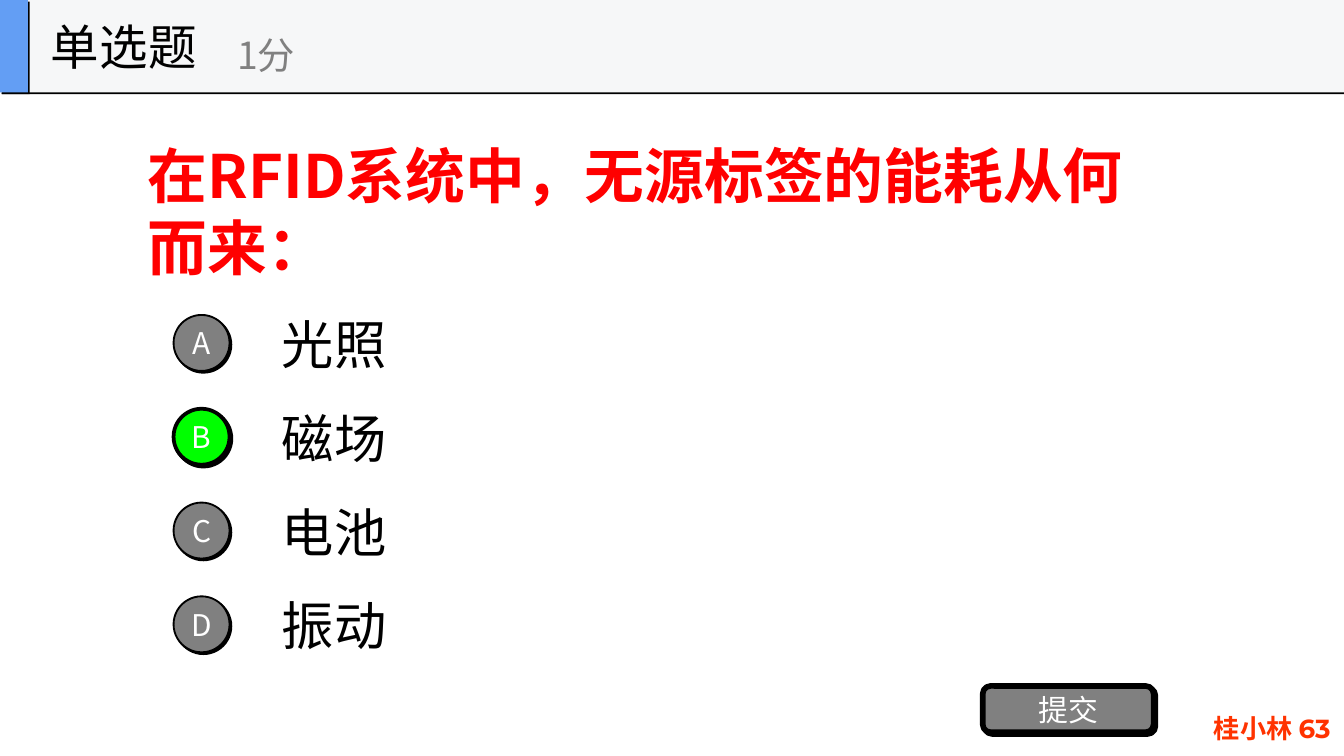
from dataclasses import dataclass

from lxml.etree import SubElement
from pptx import Presentation
from pptx.dml.color import RGBColor
from pptx.enum.shapes import MSO_SHAPE as Shape
from pptx.enum.text import MSO_ANCHOR as Anchor, PP_ALIGN as Align
from pptx.oxml.ns import qn
from pptx.util import Pt

QUESTION = "在RFID系统中，无源标签的能耗从何而来："
OPTIONS = [("A", "光照"), ("B", "磁场"), ("C", "电池"), ("D", "振动")]
CORRECT = "B"
KIND, SCORE, SUBMIT, FOOTER = "单选题", "1分", "提交", "桂小林 63"

PX = 9525
WIDTH, HEIGHT = 960, 540
HEADER_HEIGHT = 66
OPTION_TOP, OPTION_PITCH, OPTION_HEIGHT = 220, 67, 51
BADGE_LEFT, BADGE_SIZE = 124, 40


@dataclass(frozen=True)
class Theme:
    black: str = "000000"
    white: str = "FFFFFF"
    gray: str = "808080"
    green: str = "00FF00"
    red: str = "FF0000"
    orange: str = "FF3300"
    header: str = "F6F7F8"
    accent: str = "639EF4"
    sans: str = "Noto Sans CJK SC"
    serif: str = "Times New Roman"
    footer_font: str = "Montserrat"
    question_size: int = 32
    question_leading: float = 38.5
    option_size: int = 28
    kind_size: int = 26
    score_size: int = 20
    label_size: int = 16
    footer_size: int = 14


theme = Theme()


def place(shape, left, top, width, height):
    shape.left, shape.top = left * PX, top * PX
    shape.width, shape.height = width * PX, height * PX


def write(shape, text, size, color, font=theme.sans, bold=False,
          align=Align.LEFT, anchor=Anchor.MIDDLE):
    frame = shape.text_frame
    frame.text = text
    frame.word_wrap = True
    frame.vertical_anchor = anchor
    para = frame.paragraphs[0]
    para.alignment = align
    for span in para.runs:
        span.font.size, span.font.bold, span.font.name = Pt(size), bold, font
        span.font.color.rgb = RGBColor.from_string(color)
        # Chinese glyphs take the East Asian typeface
        east_asian = SubElement(span.font._element, qn("a:ea"))
        east_asian.set("typeface", theme.sans)
    return para


def add_text(page, area, text, size, color, **style):
    box = page.shapes.add_textbox(*(value * PX for value in area))
    write(box, text, size, color, **style)


def add_raised(page, preset, area, fill, line_width=0):
    """Add a filled shape with a hard black shadow to the lower right."""
    shape = page.shapes.add_shape(preset, *(value * PX for value in area))
    shape.fill.solid()
    shape.fill.fore_color.rgb = RGBColor.from_string(fill)
    if line_width:
        shape.line.color.rgb = RGBColor.from_string(theme.black)
        shape.line.width = Pt(line_width)
    else:
        shape.line.fill.background()
    shape.shadow.inherit = False
    effects = shape._element.spPr.find(qn("a:effectLst"))
    shadow = SubElement(effects, qn("a:outerShdw"), dist=str(Pt(1.4)),
                        dir=str(45 * 60000), algn="ctr", rotWithShape="0")
    SubElement(shadow, qn("a:srgbClr"), val=theme.black)
    return shape


def add_label(shape, text):
    frame = shape.text_frame
    frame.margin_left = frame.margin_right = 0
    frame.margin_top = frame.margin_bottom = 0
    write(shape, text, theme.label_size, theme.white, align=Align.CENTER)
    frame.word_wrap = False


def add_option(page, index, letter, answer):
    top = OPTION_TOP + index * OPTION_PITCH
    add_text(page, (192, top, 672, OPTION_HEIGHT), answer,
             theme.option_size, theme.black, font=theme.serif)
    correct = letter == CORRECT
    badge_top = top + (OPTION_HEIGHT - BADGE_SIZE) // 2
    badge = add_raised(page, Shape.OVAL,
                       (BADGE_LEFT, badge_top, BADGE_SIZE, BADGE_SIZE),
                       theme.green if correct else theme.gray,
                       2 if correct else 1)
    add_label(badge, letter)


def main():
    deck = Presentation()
    deck.slide_width, deck.slide_height = WIDTH * PX, HEIGHT * PX
    page = deck.slides.add_slide(deck.slide_layouts[5])

    title = page.shapes.title
    place(title, 96, 66, 732, 169)
    para = write(title, QUESTION, theme.question_size, theme.red, bold=True)
    para.line_spacing = Pt(theme.question_leading)

    add_text(page, (677, 504, 283, 36), FOOTER, theme.footer_size, theme.orange,
             font=theme.footer_font, bold=True, align=Align.RIGHT, anchor=Anchor.TOP)

    for index, (letter, answer) in enumerate(OPTIONS):
        add_option(page, index, letter, answer)

    button = add_raised(page, Shape.ROUNDED_RECTANGLE, (702, 490, 122, 33),
                        theme.gray, 3)
    add_label(button, SUBMIT)

    add_raised(page, Shape.RECTANGLE, (0, 0, WIDTH, HEADER_HEIGHT), theme.header)
    add_raised(page, Shape.RECTANGLE, (0, 0, 20, HEADER_HEIGHT), theme.accent)
    add_text(page, (27, 0, 200, HEADER_HEIGHT), KIND, theme.kind_size, theme.black)
    add_text(page, (160, 12, 240, 54), SCORE, theme.score_size, theme.gray)

    deck.save("out.pptx")


if __name__ == "__main__":
    main()
